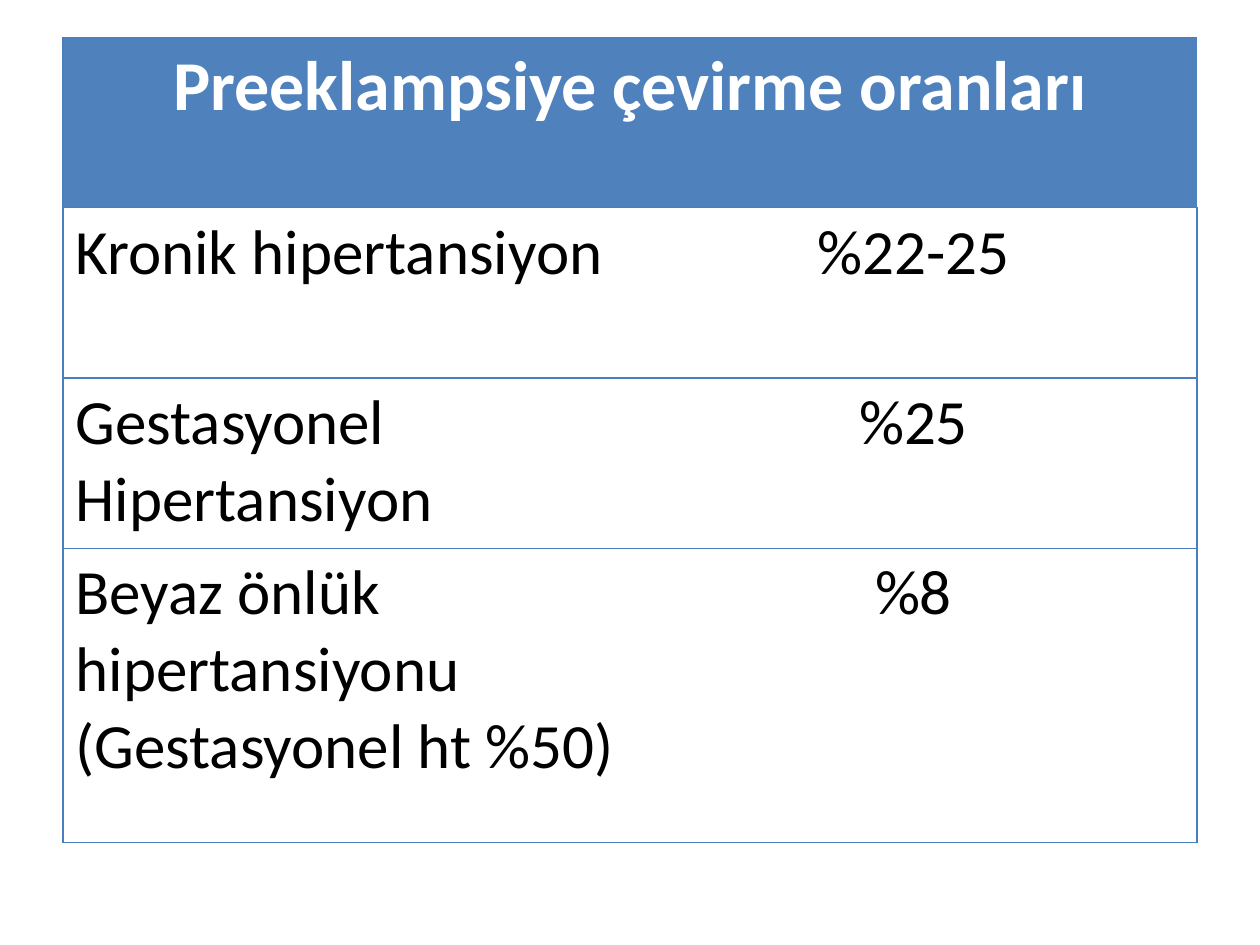
from dataclasses import dataclass

from lxml import etree
from pptx import Presentation
from pptx.dml.color import RGBColor
from pptx.enum.text import PP_ALIGN
from pptx.oxml.ns import qn
from pptx.util import Inches, Pt

LEFT, MID = PP_ALIGN.LEFT, PP_ALIGN.CENTER
BLANK = 6


@dataclass
class Theme:
    font: str = "Calibri"
    head: str = "4F81BD"
    rule: str = "4B7EBC"
    white: str = "FFFFFF"
    ink: str = "000000"
    head_size: int = 40
    body_size: int = 36
    line: float = 0.75


def put_text(frame, text, *, font, size, color, bold=False, align=LEFT):
    """Write one formatted paragraph into a text frame."""
    para = frame.paragraphs[0]
    para.alignment = align
    run = para.add_run()
    run.text = text
    run.font.name = font
    run.font.size = Pt(size)
    run.font.bold = bold
    run.font.color.rgb = RGBColor.from_string(color)


class Deck:
    def __init__(self, theme):
        self.theme = theme
        self.prs = Presentation()
        self.prs.slide_width, self.prs.slide_height = Inches(10), Inches(7.5)
        self.slide = None

    def add_slide(self):
        self.slide = self.prs.slides.add_slide(self.prs.slide_layouts[BLANK])

    def edge(self, cell, side, shown):
        """Draw or clear one cell border; call before the fill is set."""
        props = cell._tc.get_or_add_tcPr()
        line = etree.SubElement(props, qn(f"a:ln{side}"), w=str(Pt(self.theme.line)))
        if shown:
            fill = etree.SubElement(line, qn("a:solidFill"))
            etree.SubElement(fill, qn("a:srgbClr"), val=self.theme.rule)
        else:
            etree.SubElement(line, qn("a:noFill"))

    def table(self, title, rows, left, top, widths, heights):
        """Add a table with a full-width heading and no inner vertical rules."""
        theme = self.theme
        frame = self.slide.shapes.add_table(
            len(heights), len(widths), Inches(left), Inches(top),
            Inches(sum(widths)), Inches(sum(heights)))
        grid = frame.table
        grid.horz_banding = False
        for col, width in zip(grid.columns, widths):
            col.width = Inches(width)
        for row, height in zip(grid.rows, heights):
            row.height = Inches(height)

        # Borders and fills
        last = len(widths) - 1
        for r in range(len(heights)):
            for c in range(len(widths)):
                cell = grid.cell(r, c)
                shown = {"L": c == 0, "R": c == last, "T": True, "B": True}
                for side, state in shown.items():
                    self.edge(cell, side, state)
                cell.fill.solid()
                cell.fill.fore_color.rgb = RGBColor.from_string(
                    theme.white if r else theme.head)

        # Heading
        head = grid.cell(0, 0)
        head.merge(grid.cell(0, last))
        put_text(head.text_frame, title, font=theme.font, size=theme.head_size,
                 color=theme.white, bold=True, align=MID)

        # Body rows
        for r, row in enumerate(rows, 1):
            for c, text in enumerate(row):
                put_text(grid.cell(r, c).text_frame, text, font=theme.font,
                         size=theme.body_size, color=theme.ink,
                         align=MID if c else LEFT)

    def save(self):
        self.prs.save("out.pptx")


def main():
    deck = Deck(Theme())
    deck.add_slide()
    rates = [
        ("Kronik hipertansiyon", "%22-25"),
        ("Gestasyonel Hipertansiyon", "%25"),
        ("Beyaz önlük hipertansiyonu (Gestasyonel ht %50)", "%8"),
    ]
    deck.table("Preeklampsiye çevirme oranları", rates, left=0.5, top=0.3,
               widths=[4.5] * 2, heights=[1.35] * 3 + [2.34])
    deck.save()


if __name__ == "__main__":
    main()
